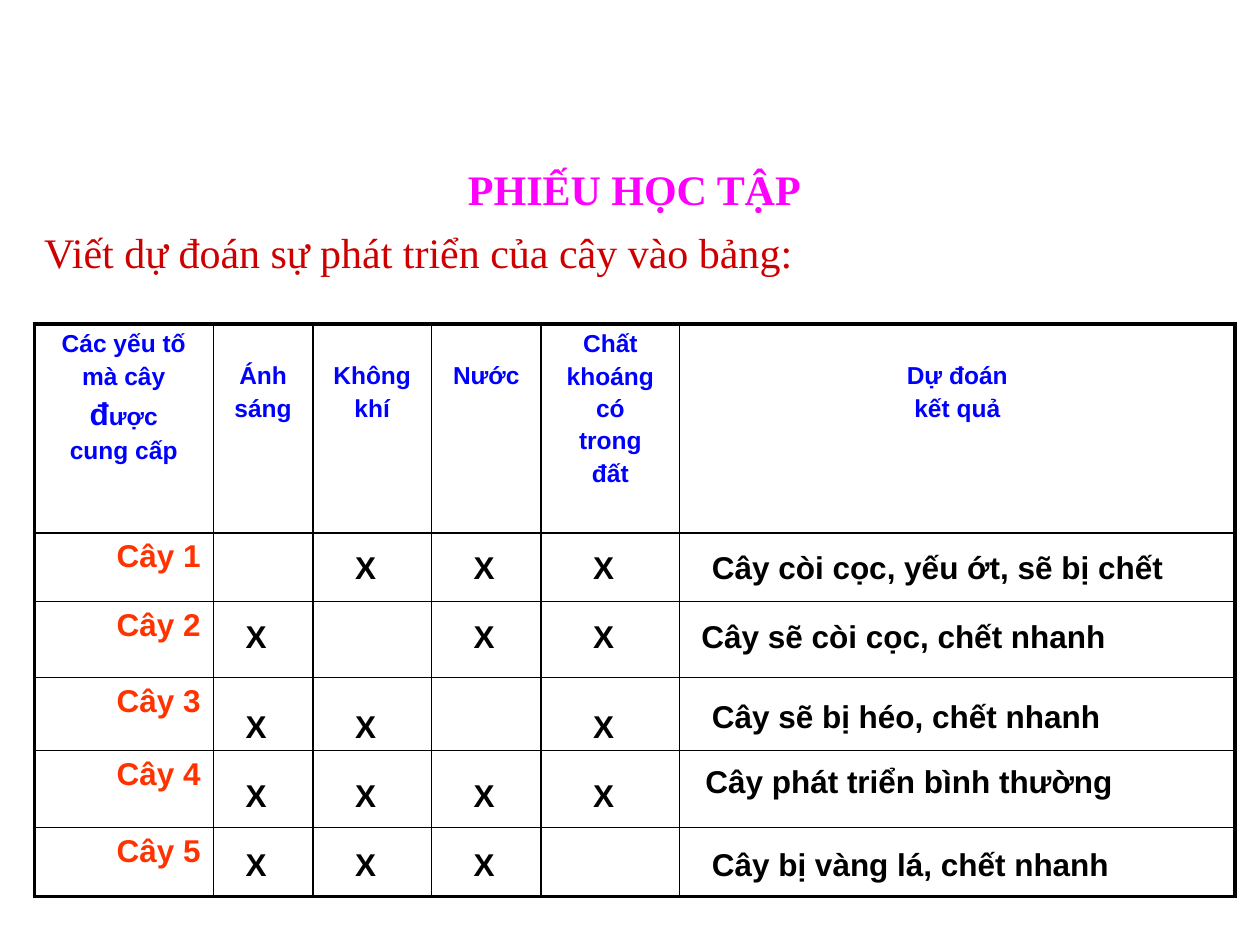
from dataclasses import dataclass

import lxml.etree
import pptx
import pptx.dml.color
import pptx.enum.text
import pptx.oxml.ns
import pptx.util

Cm = pptx.util.Cm
Pt = pptx.util.Pt
ALIGN = pptx.enum.text.PP_ALIGN

COLORS = {
    "border": "000000",
    "header": "0000FF",
    "plant": "FF3300",
    "answer": "000000",
    "title": "FF00FF",
    "task": "CC0000",
}
THIN, THICK = Pt(1), Pt(2.25)
COLUMN_WIDTHS = (3.61, 2.01, 2.39, 2.21, 2.79, 11.2)
ROW_HEIGHTS = (4.21, 1.39, 1.53, 1.47, 1.55, 1.39)
MARK_LEFTS = (4.7, 6.91, 9.3, 11.71)
BOX_HEIGHT = 1.02


@dataclass(frozen=True)
class Span:
    text: str
    size: float
    color: str
    font: str = "Arial"
    bold: bool = True


@dataclass(frozen=True)
class Header:
    paragraphs: tuple[tuple[Span, ...], ...]
    margin_top: float = 0.13


@dataclass(frozen=True)
class Plant:
    name: str
    marks: str
    mark_top: float
    result: str
    result_left: float
    result_top: float


def header(*lines: str, margin_top: float = 0.13) -> Header:
    return Header(tuple((Span(line, 14, "header"),) for line in lines), margin_top)


LOWERED = 0.78
HEADERS = (
    Header((
        (Span("Các yếu tố", 14, "header"),),
        (Span("mà cây", 14, "header"),),
        (Span("đ", 18, "header"), Span("ược", 14, "header")),
        (Span("cung cấp", 14, "header"),),
    )),
    header("Ánh", "sáng", margin_top=LOWERED),
    header("Không", "khí", margin_top=LOWERED),
    header("Nước", margin_top=LOWERED),
    header("Chất", "khoáng", "có", "trong", "đất"),
    header("Dự đoán", "kết quả", margin_top=LOWERED),
)

# Each mark string covers light, air, water and minerals in that order.
PLANTS = (
    Plant("Cây 1", "-XXX", 10.92, "Cây còi cọc, yếu ớt, sẽ bị chết", 14.1, 10.92),
    Plant("Cây 2", "X-XX", 12.32, "Cây sẽ còi cọc, chết nhanh", 13.89, 12.32),
    Plant("Cây 3", "XX-X", 14.12, "Cây sẽ bị héo, chết nhanh", 14.1, 13.92),
    Plant("Cây 4", "XXXX", 15.52, "Cây phát triển bình thường", 13.97, 15.24),
    Plant("Cây 5", "XXX-", 16.92, "Cây bị vàng lá, chết nhanh", 14.1, 16.92),
)


def add_span(para, span: Span) -> None:
    run = para.add_run()
    run.text = span.text
    run.font.name = span.font
    run.font.size = Pt(span.size)
    run.font.bold = span.bold
    run.font.color.rgb = pptx.dml.color.RGBColor.from_string(COLORS[span.color])


def fill_frame(frame, paragraphs, align) -> None:
    """Write paragraphs with a gap of a fifth of the text size between them."""
    for index, spans in enumerate(paragraphs):
        para = frame.add_paragraph() if index else frame.paragraphs[0]
        para.alignment = align
        if index:
            para.space_before = Pt(0.2 * spans[0].size)
        for span in spans:
            add_span(para, span)


def add_text(slide, left: float, top: float, width: float, span: Span,
             align=ALIGN.LEFT, height: float = BOX_HEIGHT) -> None:
    box = slide.shapes.add_textbox(Cm(left), Cm(top), Cm(width), Cm(height))
    box.text_frame.word_wrap = True
    box.text_frame.auto_size = pptx.enum.text.MSO_AUTO_SIZE.SHAPE_TO_FIT_TEXT
    fill_frame(box.text_frame, ((span,),), align)


def set_borders(cell, widths: dict[str, int]) -> None:
    """Put the four border lines ahead of the fill, as the schema asks."""
    qn = pptx.oxml.ns.qn
    properties = cell._tc.get_or_add_tcPr()
    for index, side in enumerate(("L", "R", "T", "B")):
        line = lxml.etree.Element(qn(f"a:ln{side}"), w=str(int(widths[side])))
        fill = lxml.etree.SubElement(line, qn("a:solidFill"))
        lxml.etree.SubElement(fill, qn("a:srgbClr"), val=COLORS["border"])
        properties.insert(index, line)


def add_factor_table(slide) -> None:
    row_count, column_count = len(ROW_HEIGHTS), len(COLUMN_WIDTHS)
    table = slide.shapes.add_table(
        row_count, column_count, Cm(0.69), Cm(6.53),
        Cm(sum(COLUMN_WIDTHS)), Cm(sum(ROW_HEIGHTS))).table
    table.first_row = table.horz_banding = False
    for column, width in zip(table.columns, COLUMN_WIDTHS):
        column.width = Cm(width)
    for row, height in zip(table.rows, ROW_HEIGHTS):
        row.height = Cm(height)

    for r in range(row_count):
        for c in range(column_count):
            cell = table.cell(r, c)
            cell.fill.background()
            set_borders(cell, {
                "L": THIN if c else THICK,
                "R": THICK if c == column_count - 1 else THIN,
                "T": THIN if r else THICK,
                "B": THICK if r == row_count - 1 else THIN,
            })

    for c, heading in enumerate(HEADERS):
        cell = table.cell(0, c)
        cell.margin_top = Cm(heading.margin_top)
        fill_frame(cell.text_frame, heading.paragraphs, ALIGN.CENTER)
    for r, plant in enumerate(PLANTS, start=1):
        fill_frame(table.cell(r, 0).text_frame,
                   ((Span(plant.name, 18, "plant"),),), ALIGN.RIGHT)


def add_answers(slide, plant: Plant) -> None:
    for left, mark in zip(MARK_LEFTS, plant.marks):
        if mark == "X":
            add_text(slide, left, plant.mark_top, 0.99, Span(mark, 18, "answer"))
    add_text(slide, plant.result_left, plant.result_top, 10.59,
             Span(plant.result, 18, "answer"))


def main() -> None:
    deck = pptx.Presentation()
    deck.slide_width, deck.slide_height = Cm(25.4), Cm(19.05)
    slide = deck.slides.add_slide(deck.slide_layouts[6])
    add_factor_table(slide)
    for plant in PLANTS:
        add_answers(slide, plant)
    serif = "Times New Roman"
    add_text(slide, 0.79, 3.18, 24, Span("PHIẾU HỌC TẬP", 24, "title", serif),
             ALIGN.CENTER, height=1.28)
    add_text(slide, 0.64, 4.45, 24,
             Span("Viết dự đoán sự phát triển của cây vào bảng:", 24, "task", serif, False),
             ALIGN.JUSTIFY, height=1.28)
    deck.save("out.pptx")


if __name__ == "__main__":
    main()
